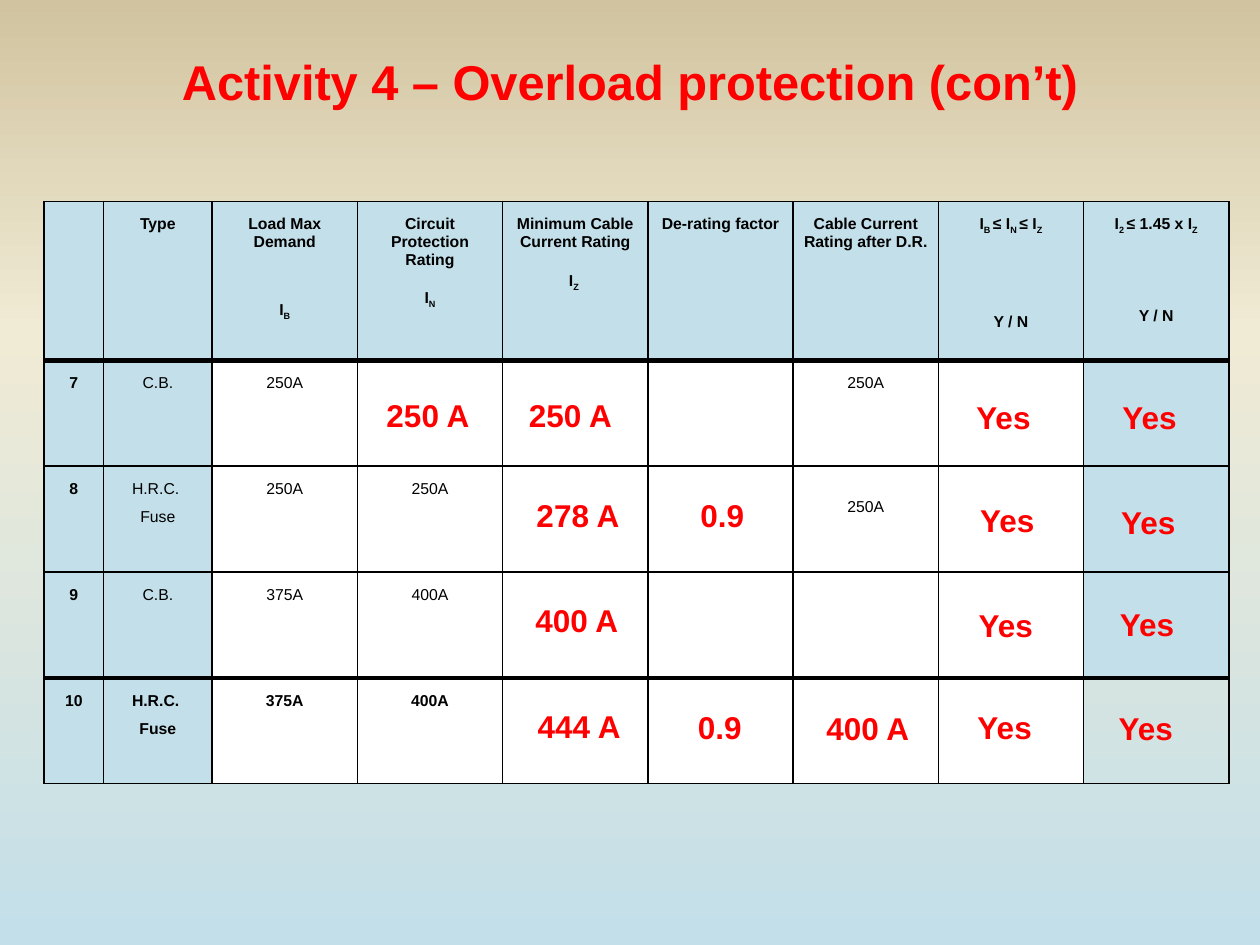
from copy import deepcopy

from pptx import Presentation, util as u
from pptx.dml.color import RGBColor
from pptx.enum import text
from pptx.oxml import parse_xml
from pptx.oxml.ns import nsdecls, qn

Pt = u.Pt
BLUE, WHITE, RED, BLACK = "C3DFE9", "FFFFFF", "FF0000", "000000"


def color(value):
    return RGBColor.from_string(value)


def write(paragraph, content, size, value, bold=True):
    """Fill a paragraph; parts between bars are subscripts."""
    for index, part in enumerate(content.split("|")):
        run = paragraph.add_run()
        run.text = part
        if index % 2:
            run.font._element.set("baseline", "-25000")
    font = paragraph.font
    font.name, font.size, font.bold = "Arial", Pt(size), bold
    font.color.rgb = color(value)


presentation = Presentation()
presentation.slide_width, presentation.slide_height = Pt(720), Pt(540)
slide = presentation.slides.add_slide(presentation.slide_layouts[6])

# Background gradient, running from bottom to top
fill = slide.background.fill
fill.gradient()
fill.gradient_angle = 90
stop_list = slide.element.find(".//" + qn("a:gsLst"))
stop_list.append(deepcopy(stop_list[-1]))
stops = [(0, BLUE), (0.65, "F0EBD5"), (1, "D1C39F")]
for stop, (position, value) in zip(fill.gradient_stops, stops):
    stop.position = position
    stop.color.rgb = color(value)

# Title
title = slide.shapes.add_textbox(Pt(36), Pt(21.6), Pt(648), Pt(90))
frame = title.text_frame
frame.word_wrap = True
frame.margin_top = Pt(8)
frame.paragraphs[0].alignment = text.PP_ALIGN.CENTER
write(frame.paragraphs[0], "Activity 4 – Overload protection (con’t)", 27.9, RED)

# Table content: each cell lists its paragraphs
header = [
    [], ["Type"], ["Load Max Demand", "I|B"], ["Circuit Protection Rating", "I|N"],
    ["Minimum Cable Current Rating", "I|Z "], ["De-rating factor"],
    ["Cable Current Rating after D.R."],
    ["I|B |≤ I|N |≤ I|Z", "Y / N"], ["I|2 |≤ 1.45 x I|Z", "Y / N"],
]
rows = [
    header,
    [["7"], ["C.B."], ["250A"], [], [], [], ["250A"], [], []],
    [["8"], ["H.R.C. ", "Fuse"], ["250A"], ["250A"], [], [], ["250A"], [], []],
    [["9"], ["C.B."], ["375A"], ["400A"], [], [], [], [], []],
    [["10"], ["H.R.C. ", "Fuse"], ["375A"], ["400A"], [], [], [], [], []],
]
# Space before the second header paragraph, by column
header_gaps = {2: 22.5, 7: 38.5, 8: 35}
column_widths = [34, 62] + [83] * 7
row_heights = [90.7] + [60.5] * 4
last_row, last_column = len(rows) - 1, len(column_widths) - 1

table = slide.shapes.add_table(len(rows), len(column_widths), Pt(25.2), Pt(115.2),
                               Pt(sum(column_widths)), Pt(sum(row_heights))).table
table.first_row = table.horz_banding = False
for column, width in zip(table.columns, column_widths):
    column.width = Pt(width)
for row, height in zip(table.rows, row_heights):
    row.height = Pt(height)

for r, cells in enumerate(rows):
    for c, lines in enumerate(cells):
        cell = table.cell(r, c)
        cell.margin_left = cell.margin_right = Pt(5)
        cell.margin_top = cell.margin_bottom = Pt(8)

        # Borders: heavy under the header and above the last row
        properties = cell._tc.get_or_add_tcPr()
        heavy = {"T": r in (1, last_row), "B": r in (0, last_row - 1)}
        for side in "LRTB":
            width = Pt(3 if heavy.get(side) else 1)
            properties.append(parse_xml(
                f'<a:ln{side} {nsdecls("a")} w="{width}"><a:solidFill>'
                f'<a:srgbClr val="{BLACK}"/></a:solidFill></a:ln{side}>'))

        # Fill: the bottom right cell stays open
        if (r, c) == (last_row, last_column):
            cell.fill.background()
        else:
            cell.fill.solid()
            shaded = r == 0 or c in (0, 1, last_column)
            cell.fill.fore_color.rgb = color(BLUE if shaded else WHITE)

        # Text
        for index, line in enumerate(lines):
            frame = cell.text_frame
            paragraph = frame.add_paragraph() if index else frame.paragraphs[0]
            paragraph.alignment = text.PP_ALIGN.CENTER
            paragraph.space_before = Pt(6)
            if r == 0:
                paragraph.space_after = Pt(6)
                if index:
                    paragraph.space_before = Pt(header_gaps.get(c, 6))
            if (r, c) == (2, 6):
                paragraph.line_spacing = 2.0
            write(paragraph, line, 9, BLACK, r in (0, last_row) or c == 0)

# Answers laid over the table: text, left, top
answers = [
    ("250 A", 213.8, 222.5), ("250 A", 295.2, 222.5),
    ("Yes", 550.8, 223.9), ("Yes", 634.3, 223.9),
    ("278 A", 299.5, 280.1), ("0.9", 393.1, 280.1),
    ("Yes", 553, 283), ("Yes", 633.6, 283.7),
    ("400 A", 298.8, 339.8), ("Yes", 552.2, 342.7), ("Yes", 632.9, 342),
    ("444 A", 300.2, 400.3), ("0.9", 391.7, 401), ("400 A", 465.1, 401.8),
    ("Yes", 551.5, 401), ("Yes", 632.2, 401.8),
]
for answer, left, top in answers:
    box = slide.shapes.add_textbox(Pt(left), Pt(top), Pt(62.6), Pt(28.8))
    box.text_frame.word_wrap = True
    box.text_frame.margin_right = 0
    write(box.text_frame.paragraphs[0], answer, 18, RED)

presentation.save("out.pptx")
